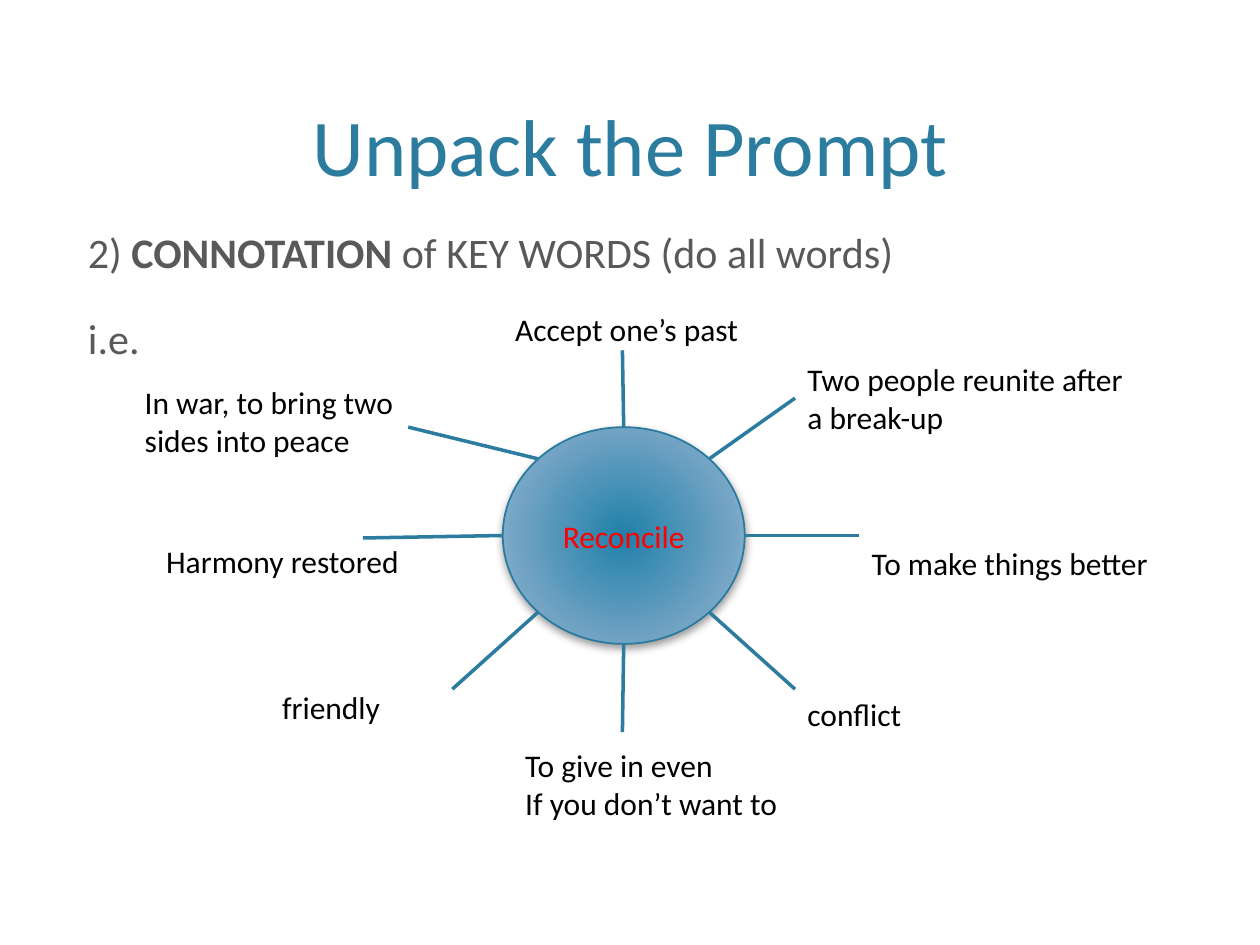
from math import cos, radians, sin

from lxml.etree import SubElement
from pptx import Presentation
from pptx.dml.color import RGBColor
from pptx.enum.shapes import MSO_CONNECTOR, MSO_SHAPE
from pptx.enum.text import MSO_ANCHOR, MSO_AUTO_SIZE, PP_ALIGN
from pptx.oxml import parse_xml
from pptx.oxml.ns import nsdecls, qn
from pptx.util import Inches, Pt

COLORS = {"accent": "2C7C9F", "outline": "287A9E", "body": "595959",
          "label": "000000", "keyword": "FF0000",
          "inner": "2180AA", "middle": "75A5C5", "outer": "B8CCDC"}
FONT = "Calibri"

prs = Presentation()
prs.slide_width, prs.slide_height = Inches(10), Inches(7.5)
UNIT = prs.slide_width // 100  # square grid: 100 columns by 75 rows
slide = prs.slides.add_slide(prs.slide_layouts[5])
shapes = slide.shapes


def grid(*cells):
    return [round(cell * UNIT) for cell in cells]


def style(tf, size, color):
    for p in tf.paragraphs:
        for r in p.runs:
            r.font.name, r.font.size = FONT, Pt(size)
            r.font.color.rgb = RGBColor.from_string(COLORS[color])


# Title
title = shapes.title
title.left, title.top, title.width, title.height = grid(6, 1.2, 88, 14.6)
tf = title.text_frame
tf.text = "Unpack the Prompt"
tf.vertical_anchor = MSO_ANCHOR.BOTTOM
tf.paragraphs[0].alignment = PP_ALIGN.CENTER
style(tf, 46, "accent")

# Instruction
tf = shapes.add_textbox(*grid(6, 17.5, 88, 47.5)).text_frame
tf.word_wrap = True
p = tf.paragraphs[0]
for text, bold in (("2) ", False), ("CONNOTATION", True),
                   (" of KEY WORDS (do all words)", False)):
    r = p.add_run()
    r.text, r.font.bold = text, bold
tf.add_paragraph().text = "i.e."
for p in tf.paragraphs:
    p.space_before = Pt(20)
    pPr = p._p.get_or_add_pPr()
    pPr.set("marL", str(Inches(0.38)))
    pPr.set("indent", str(-Inches(0.38)))
style(tf, 24, "body")

# Keyword in the hub
CX, CY, RX, RY = 49.5, 42.5, 9.6, 8.6
hub = shapes.add_shape(MSO_SHAPE.OVAL, *grid(CX - RX, CY - RY, 2 * RX, 2 * RY))
hub.line.color.rgb = RGBColor.from_string(COLORS["outline"])
hub.line.width = Pt(1)
stops = "".join(
    f'<a:gs pos="{pos * 1000}"><a:srgbClr val="{COLORS[name]}"/></a:gs>'
    for pos, name in ((0, "inner"), (69, "middle"), (100, "outer")))
outline = hub._element.spPr.find(qn("a:ln"))
outline.addprevious(parse_xml(
    f'<a:gradFill {nsdecls("a")} rotWithShape="1"><a:gsLst>{stops}</a:gsLst>'
    '<a:path path="circle"><a:fillToRect l="100000" t="100000" r="100000" '
    'b="100000"/></a:path></a:gradFill>'))
outline.addnext(parse_xml(
    f'<a:effectLst {nsdecls("a")}><a:outerShdw blurRad="{Pt(5)}" '
    f'dist="{Pt(2)}" dir="5400000" rotWithShape="0"><a:srgbClr val="000000">'
    '<a:alpha val="40000"/></a:srgbClr></a:outerShdw></a:effectLst>'))
tf = hub.text_frame
tf.text = "Reconcile"
tf.vertical_anchor = MSO_ANCHOR.MIDDLE
tf.paragraphs[0].alignment = PP_ALIGN.CENTER
style(tf, 18, "keyword")

# Spokes every 45 degrees, clockwise from the right:
# spoke end, label position and width, label lines
connotations = [
    ((68.2, 42.5), (68.2, 42.7, 28.1), ["To make things better"]),
    ((63.1, 54.7), (63.1, 54.7, 10.9), ["conflict"]),
    ((49.4, 58.1), (40.7, 58.7, 25.7),
     ["To give in even", "If you don’t want to"]),
    ((35.9, 54.7), (21.4, 54.1, 11), ["friendly"]),
    ((28.8, 42.7), (12.2, 42.5, 23.6), ["Harmony restored"]),
    ((32.4, 33.9), (10.5, 29.9, 25.1),
     ["In war, to bring two", "sides into peace"]),
    ((49.4, 27.8), (39.9, 24.1, 23.1), ["Accept one’s past"]),
    ((63.1, 31.6), (63.1, 28.1, 31),
     ["Two people reunite after", "a break-up"]),
]
for i, (end, (left, top, width), lines) in enumerate(connotations):
    angle = radians(45 * i)
    spoke = shapes.add_connector(
        MSO_CONNECTOR.STRAIGHT,
        *grid(CX + RX * cos(angle), CY + RY * sin(angle), *end))
    spoke.line.color.rgb = RGBColor.from_string(COLORS["accent"])
    spoke.line.width = Pt(2)
    SubElement(spoke._element.spPr, qn("a:effectLst"))

    height = 1 + 3.05 * len(lines)
    tf = shapes.add_textbox(*grid(left, top, width, height)).text_frame
    tf.word_wrap = False
    tf.auto_size = MSO_AUTO_SIZE.SHAPE_TO_FIT_TEXT
    tf.text = "\n".join(lines)
    style(tf, 18, "label")

prs.save("out.pptx")
